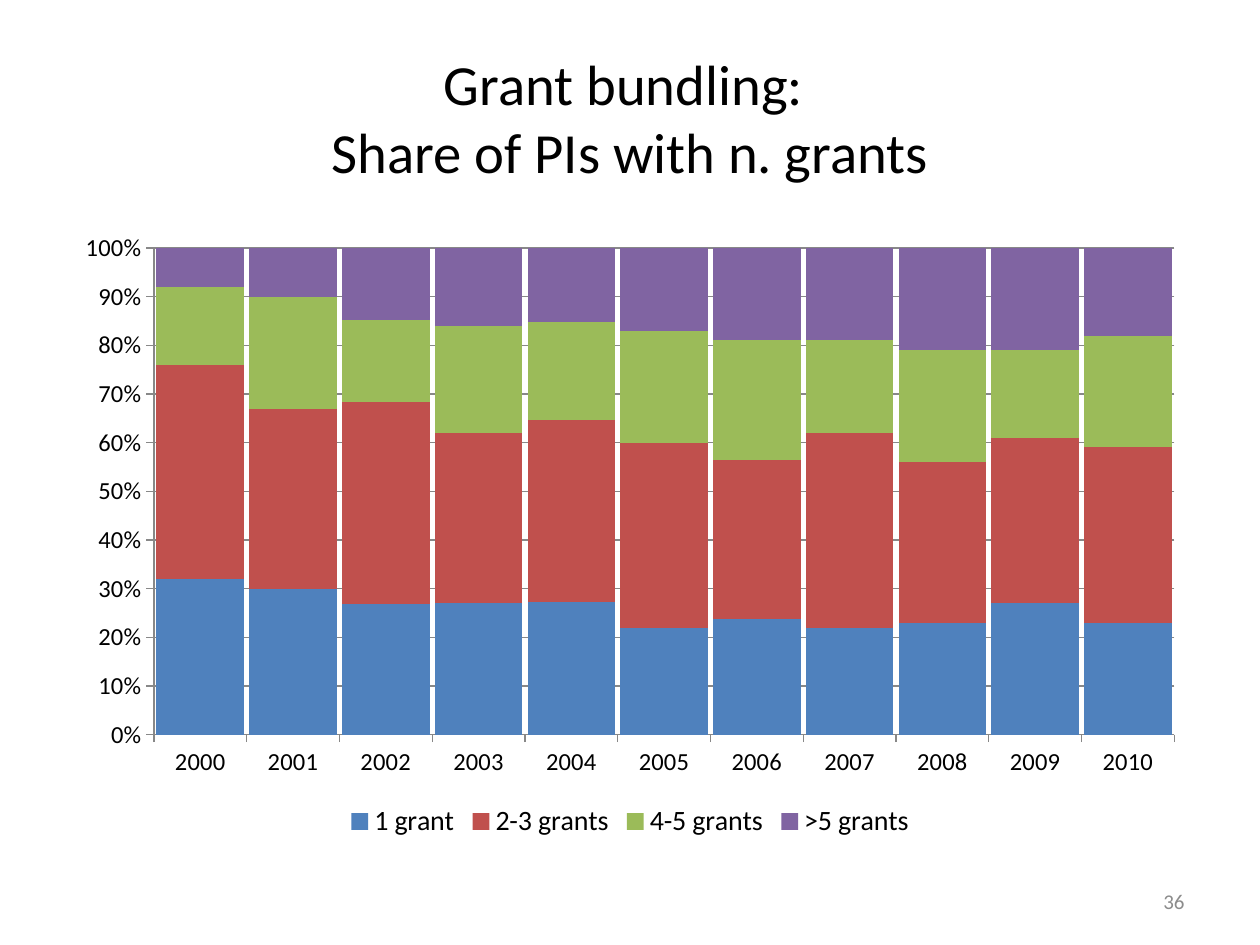
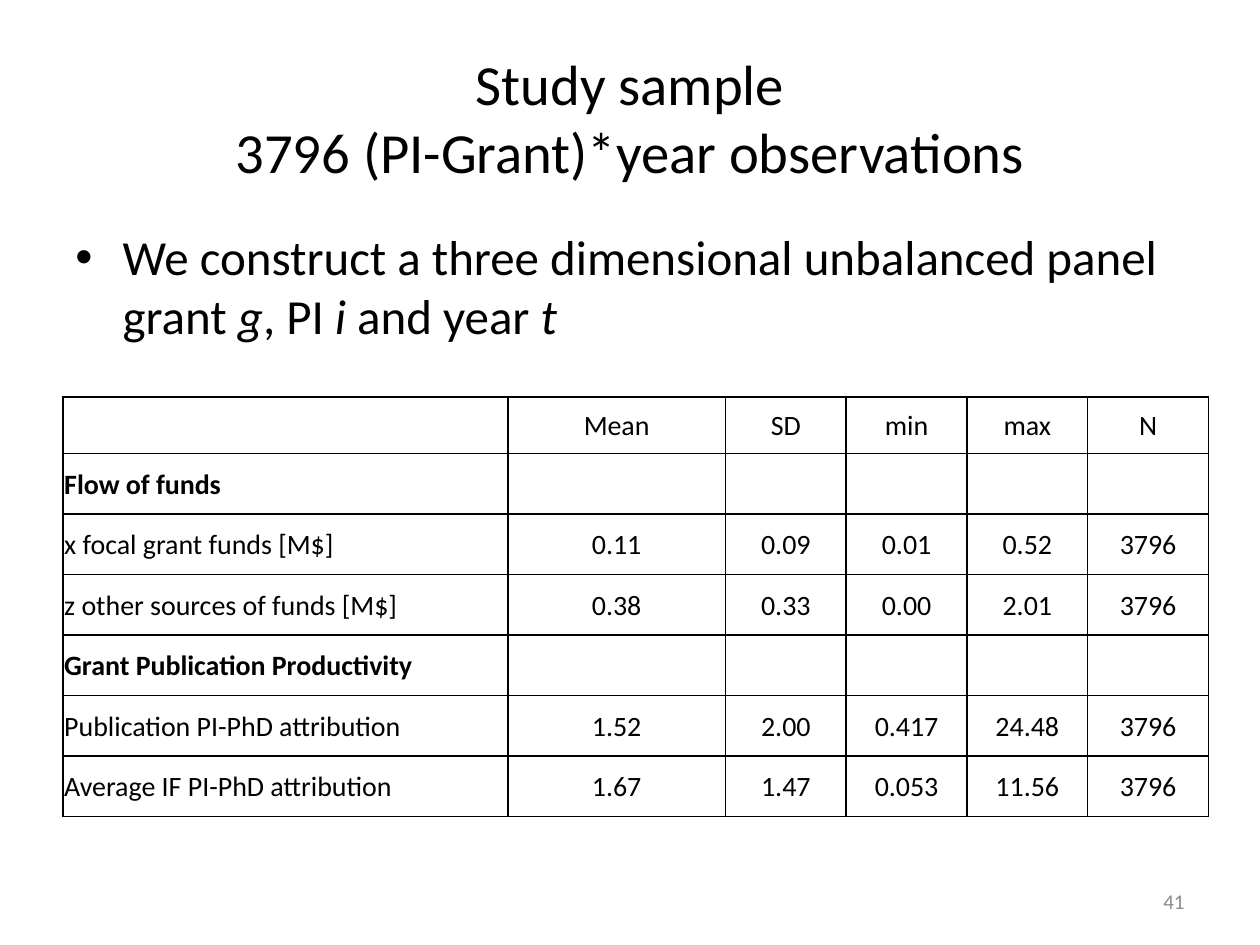
from dataclasses import dataclass

from lxml.etree import SubElement
from pptx import Presentation
from pptx.chart.data import CategoryChartData
from pptx.dml.color import RGBColor
from pptx.enum.chart import XL_CHART_TYPE, XL_LEGEND_POSITION, XL_TICK_MARK
from pptx.enum.text import MSO_ANCHOR, MSO_AUTO_SIZE, PP_ALIGN
from pptx.oxml.ns import qn
from pptx.util import Pt

BLACK = RGBColor(0x00, 0x00, 0x00)
GRAY = RGBColor(0x88, 0x88, 0x88)
PALE = RGBColor(0x8C, 0x8C, 0x8C)
BLUE = RGBColor(0x4F, 0x81, 0xBD)
RED = RGBColor(0xC0, 0x50, 0x4D)
GREEN = RGBColor(0x9B, 0xBB, 0x59)
PURPLE = RGBColor(0x80, 0x64, 0xA2)
FONT = "Calibri"


@dataclass
class Box:
    left: float
    top: float
    width: float
    height: float

    def span(self) -> tuple:
        return tuple(Pt(n) for n in (self.left, self.top, self.width, self.height))


@dataclass
class Series:
    name: str
    shares: tuple
    color: RGBColor


TITLE = Box(3.6, 21.6, 712.8, 90)
BODY = Box(36, 126, 648, 356.4)
NUMBER = Box(516, 500.4, 168, 28.8)
TABLE = Box(36, 226.8, 654.6, 240)

YEARS = [str(year) for year in range(2000, 2011)]
GRANTS = (
    Series("1 grant", (32, 30, 27, 27, 27, 22, 24, 22, 23, 27, 23), BLUE),
    Series("2-3 grants", (44, 37, 42, 35, 37, 38, 33, 40, 33, 34, 36), RED),
    Series("4-5 grants", (16, 23, 17, 22, 20, 23, 25, 19, 23, 18, 23), GREEN),
    Series(">5 grants", (8, 10, 15, 16, 15, 17, 19, 19, 21, 21, 18), PURPLE),
)

PANEL = (
    ("We construct a three dimensional unbalanced panel grant ", False),
    ("g", True), (", PI ", False), ("i", True), (" and year ", False), ("t", True),
)

# A row with a label alone is a section heading
STATS = (
    ("", "Mean", "SD", "min", "max", "N"),
    ("Flow of funds",),
    ("x focal grant funds [M$]", "0.11", "0.09", "0.01", "0.52", "3796"),
    ("z other sources of funds [M$]", "0.38", "0.33", "0.00", "2.01", "3796"),
    ("Grant Publication Productivity",),
    ("Publication PI-PhD attribution", "1.52", "2.00", "0.417", "24.48", "3796"),
    ("Average IF PI-PhD attribution", "1.67", "1.47", "0.053", "11.56", "3796"),
)
WIDTHS = (254.2, 124.4, 69, 69, 69, 69)
HEIGHTS = (32.4,) + (34.6,) * 6


def style(font, size: float, color: RGBColor = BLACK) -> None:
    font.name = FONT
    font.size = Pt(size)
    font.color.rgb = color


def write(frame, text: str, size: float, align, color: RGBColor = BLACK) -> None:
    frame.text = text
    frame.word_wrap = True
    for para in frame.paragraphs:
        para.alignment = align
        for run in para.runs:
            style(run.font, size, color)


# Shared title and slide number
def start(deck, title: str, number: int):
    slide = deck.slides.add_slide(deck.slide_layouts[5])
    head = slide.shapes.title
    head.left, head.top, head.width, head.height = TITLE.span()
    write(head.text_frame, title, 32.4, PP_ALIGN.CENTER)
    head.text_frame.auto_size = MSO_AUTO_SIZE.NONE
    head.text_frame.vertical_anchor = MSO_ANCHOR.MIDDLE
    foot = slide.shapes.add_textbox(*NUMBER.span()).text_frame
    write(foot, str(number), 12, PP_ALIGN.RIGHT, PALE)
    foot.vertical_anchor = MSO_ANCHOR.MIDDLE
    return slide


def rule(line) -> None:
    line.color.rgb = GRAY
    line.width = Pt(0.75)


# Stacked shares per year
def draw_chart(slide) -> None:
    data = CategoryChartData(number_format="0")
    data.categories = YEARS
    for item in GRANTS:
        data.add_series(item.name, item.shares)
    kind = XL_CHART_TYPE.COLUMN_STACKED_100
    chart = slide.shapes.add_chart(kind, *BODY.span(), data).chart
    style(chart.font, 10)
    chart.has_title = False

    plot = chart.plots[0]
    plot.gap_width = 6
    plot.overlap = 100
    plot.vary_by_categories = False
    for item, bar in zip(GRANTS, plot.series):
        bar.format.fill.solid()
        bar.format.fill.fore_color.rgb = item.color

    for axis in (chart.category_axis, chart.value_axis):
        style(axis.tick_labels.font, 14)
        axis.major_tick_mark = XL_TICK_MARK.OUTSIDE
        axis.minor_tick_mark = XL_TICK_MARK.NONE
        rule(axis.format.line)
    scale = chart.value_axis
    scale.maximum_scale = 1
    scale.major_unit = 0.1
    scale.tick_labels.number_format = "0%"
    scale.tick_labels.number_format_is_linked = False
    scale.has_major_gridlines = True
    rule(scale.major_gridlines.format.line)

    chart.has_legend = True
    chart.legend.position = XL_LEGEND_POSITION.BOTTOM
    chart.legend.include_in_layout = False
    style(chart.legend.font, 16)


# Bulleted sentence with italic symbols
def draw_point(slide) -> None:
    frame = slide.shapes.add_textbox(*BODY.span()).text_frame
    frame.word_wrap = True
    para = frame.paragraphs[0]
    para.space_before = Pt(5.6)
    for text, slant in PANEL:
        run = para.add_run()
        run.text = text
        style(run.font, 28)
        run.font.italic = slant
    props = para._p.get_or_add_pPr()
    props.set("marL", str(Pt(27)))
    props.set("indent", str(Pt(-27)))
    SubElement(props, qn("a:buFont"), typeface="Arial")
    SubElement(props, qn("a:buChar"), char="•")


def frame_cell(cell) -> None:
    props = cell._tc.get_or_add_tcPr()
    for side in ("L", "R", "T", "B"):
        line = SubElement(props, qn(f"a:ln{side}"), w=str(Pt(1)))
        fill = SubElement(line, qn("a:solidFill"))
        SubElement(fill, qn("a:srgbClr"), val=str(BLACK))
    cell.fill.background()


# Summary statistics
def draw_table(slide) -> None:
    shape = slide.shapes.add_table(len(STATS), len(WIDTHS), *TABLE.span())
    table = shape.table
    table.first_row = table.horz_banding = False
    for col, width in zip(table.columns, WIDTHS):
        col.width = Pt(width)
    for row, height in zip(table.rows, HEIGHTS):
        row.height = Pt(height)
    for row, texts in zip(table.rows, STATS):
        for c, cell in enumerate(row.cells):
            frame_cell(cell)
            cell.vertical_anchor = MSO_ANCHOR.MIDDLE
            cell.margin_left = cell.margin_right = cell.margin_top = Pt(0.72)
            cell.margin_bottom = Pt(0)
            if c < len(texts) and texts[c]:
                align = PP_ALIGN.CENTER if c else PP_ALIGN.LEFT
                write(cell.text_frame, texts[c], 16, align)
                cell.text_frame.paragraphs[0].runs[0].font.bold = len(texts) == 1


def main() -> None:
    deck = Presentation()
    deck.slide_width, deck.slide_height = Pt(720), Pt(540)
    draw_chart(start(deck, "Grant bundling: \vShare of PIs with n. grants", 36))
    sample = start(deck, "Study sample\v3796 (PI-Grant)*year observations", 41)
    draw_point(sample)
    draw_table(sample)
    deck.save("out.pptx")


if __name__ == "__main__":
    main()
